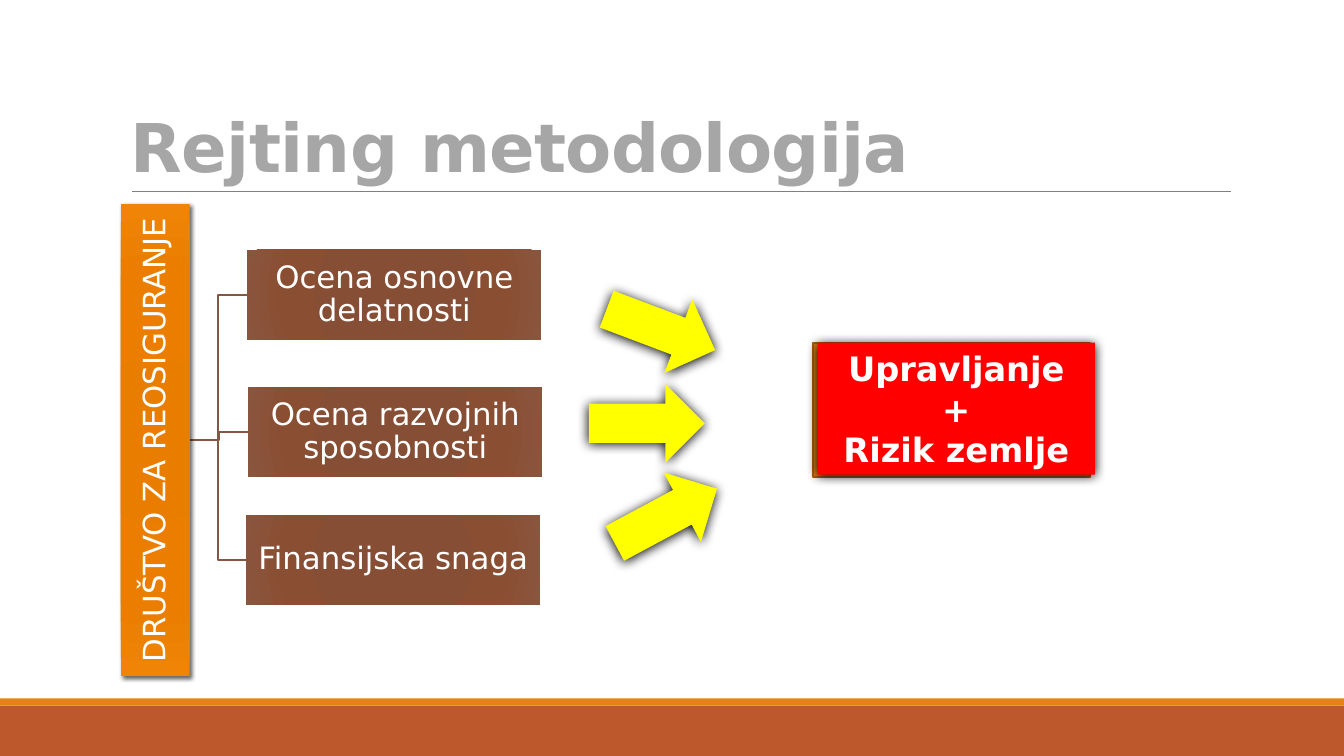
from lxml import etree
from pptx import Presentation
from pptx.dml.color import RGBColor
from pptx.enum import shapes, text
from pptx.oxml import parse_xml
from pptx.oxml.ns import nsdecls, qn
from pptx.util import Inches, Pt

FONT = "DejaVu Sans"
ORANGE_STOPS = {0: "E57B00", 34: "E87D00", 70: "EB7E00", 100: "EF8407"}
BROWN_STOPS = {0: "874C32", 34: "864E34", 70: "8A4E33", 100: "8A553D"}
BLOCK_SHADOW = ("000000", 100, 8.5, 1, 90)
BAR_SHADOW = ("000000", 60, 3, 2, 45)
RECTANGLE = shapes.MSO_SHAPE.RECTANGLE
RIGHT_ARROW = shapes.MSO_SHAPE.RIGHT_ARROW


def color(hex_value):
    return RGBColor.from_string(hex_value)


def add_block(slide, box, fill, kind=RECTANGLE, rotation=0, outline=None):
    """Add a filled preset shape without shadow; box is left, top, width, height."""
    shape = slide.shapes.add_shape(kind, *map(Inches, box))
    shape.rotation = rotation
    shape.shadow.inherit = False
    shape.fill.solid()
    shape.fill.fore_color.rgb = color(fill)
    if outline:
        shape.line.color.rgb = color(outline)
        shape.line.width = Pt(1.25)
    else:
        shape.line.fill.background()
    return shape


def set_radial_gradient(shape, stops):
    stop_list = "".join(
        f'<a:gs pos="{position * 1000}"><a:srgbClr val="{value}"/></a:gs>'
        for position, value in stops.items())
    gradient = parse_xml(
        f'<a:gradFill {nsdecls("a")} rotWithShape="1"><a:gsLst>{stop_list}</a:gsLst>'
        '<a:path path="circle"><a:fillToRect l="100000" t="100000" r="100000" b="100000"/>'
        '</a:path></a:gradFill>')
    properties = shape._element.spPr
    properties.replace(properties.find(qn("a:solidFill")), gradient)


def set_shadow(shape, value, opacity, blur, distance, angle):
    effects = shape._element.spPr.find(qn("a:effectLst"))
    shadow = etree.SubElement(
        effects, qn("a:outerShdw"), blurRad=str(Pt(blur)), dist=str(Pt(distance)),
        dir=str(angle * 60000), algn="ctr", rotWithShape="0")
    shadow_color = etree.SubElement(shadow, qn("a:srgbClr"), val=value)
    etree.SubElement(shadow_color, qn("a:alpha"), val=str(opacity * 1000))


def write(shape, words, size, value="FFFFFF", bold=False, spacing=0.9,
          align=text.PP_ALIGN.CENTER, anchor=text.MSO_ANCHOR.MIDDLE, inset=None):
    frame = shape.text_frame
    frame.text = words
    frame.word_wrap = True
    frame.vertical_anchor = anchor
    if inset is not None:
        frame.margin_left = frame.margin_right = Inches(inset)
        frame.margin_top = frame.margin_bottom = Inches(inset)
    for paragraph in frame.paragraphs:
        paragraph.alignment = align
        paragraph.line_spacing = spacing
        for run in paragraph.runs:
            run.font.name = FONT
            run.font.size = Pt(size)
            run.font.bold = bold
            run.font.color.rgb = color(value)


def add_footer_bands(slide, width, top):
    add_block(slide, (0, top + 0.07, width, 0.5), "BD582C")
    add_block(slide, (0, top, width, 0.07), "E48312")


def add_title(slide, words, left, top, width, height):
    bottom = top + height
    rule = slide.shapes.add_connector(
        shapes.MSO_CONNECTOR.STRAIGHT, Inches(left + 0.11), Inches(bottom),
        Inches(left + width + 0.01), Inches(bottom))
    rule.line.color.rgb = color("808080")
    rule.line.width = Pt(0.5)
    etree.SubElement(rule._element.spPr, qn("a:effectLst"))
    title = slide.shapes.add_textbox(*map(Inches, (left, top, width, height)))
    write(title, words, 48, "A6A6A6", bold=True, spacing=0.85,
          align=text.PP_ALIGN.LEFT, anchor=text.MSO_ANCHOR.BOTTOM)
    title.text_frame.paragraphs[0].runs[0].font._element.set("spc", "-50")


def add_branch(slide, start, end):
    """Draw an elbow line that turns halfway between two points."""
    (start_x, start_y), (end_x, end_y) = start, end
    middle = (start_x + end_x) / 2
    builder = slide.shapes.build_freeform(Inches(start_x), Inches(start_y))
    corners = [(middle, start_y), (middle, end_y), (end_x, end_y)]
    builder.add_line_segments([(Inches(x), Inches(y)) for x, y in corners], close=False)
    branch = builder.convert_to_shape()
    branch.shadow.inherit = False
    branch.fill.background()
    branch.line.color.rgb = color("865640")
    branch.line.width = Pt(1.25)


def add_hierarchy(slide, left, top, bar_width, bar_height, root, children):
    """Place a vertical root bar and its branches; children hold label, left, top."""
    child_width, child_height = 2.92, 0.89
    middle = top + bar_height / 2
    for _, child_left, child_top in reversed(children):
        add_branch(slide, (left + bar_width, middle),
                   (child_left, child_top + child_height / 2))
    bar_box = (left + (bar_width - bar_height) / 2, middle - bar_width / 2,
               bar_height, bar_width)
    bar = add_block(slide, bar_box, "E57B00", rotation=270)
    set_radial_gradient(bar, ORANGE_STOPS)
    set_shadow(bar, *BAR_SHADOW)
    write(bar, root, 22, inset=0.02)
    for label, child_left, child_top in children:
        child = add_block(slide, (child_left, child_top, child_width, child_height), "874C32")
        set_radial_gradient(child, BROWN_STOPS)
        write(child, label, 22, inset=0.02)


def add_result(slide, left, top, width, height):
    add_block(slide, (left, top, width, height + 0.02), "E48312", outline="A9610D")
    result = add_block(slide, (left + 0.05, top, width, height), "FF0000")
    set_shadow(result, *BLOCK_SHADOW)
    write(result, "Upravljanje\n+\nRizik zemlje", 24, bold=True, spacing=1.0)


def add_arrows(slide, places):
    for left, top, rotation in places:
        arrow = add_block(slide, (left, top, 1.15, 0.78), "FFFF00", RIGHT_ARROW, rotation)
        set_shadow(arrow, *BLOCK_SHADOW)


def main():
    presentation = Presentation()
    presentation.slide_width = Inches(13.33)
    presentation.slide_height = Inches(7.5)
    slide = presentation.slides.add_slide(presentation.slide_layouts[6])
    add_footer_bands(slide, 13.33, 6.93)
    add_title(slide, "Rejting metodologija", 1.2, 0.31, 11, 1.59)
    add_hierarchy(slide, 1.2, 2.02, 0.68, 4.69, "DRUŠTVO ZA REOSIGURANJE", [
        ("Ocena osnovne delatnosti", 2.45, 2.48),
        ("Ocena razvojnih sposobnosti", 2.46, 3.84),
        ("Finansijska snaga", 2.44, 5.11),
    ])
    add_result(slide, 8.06, 3.4, 2.75, 1.31)
    add_arrows(slide, [(5.98, 2.88, 20.7), (5.84, 3.81, 0), (6.03, 4.73, 331.8)])
    presentation.save("out.pptx")


if __name__ == "__main__":
    main()
